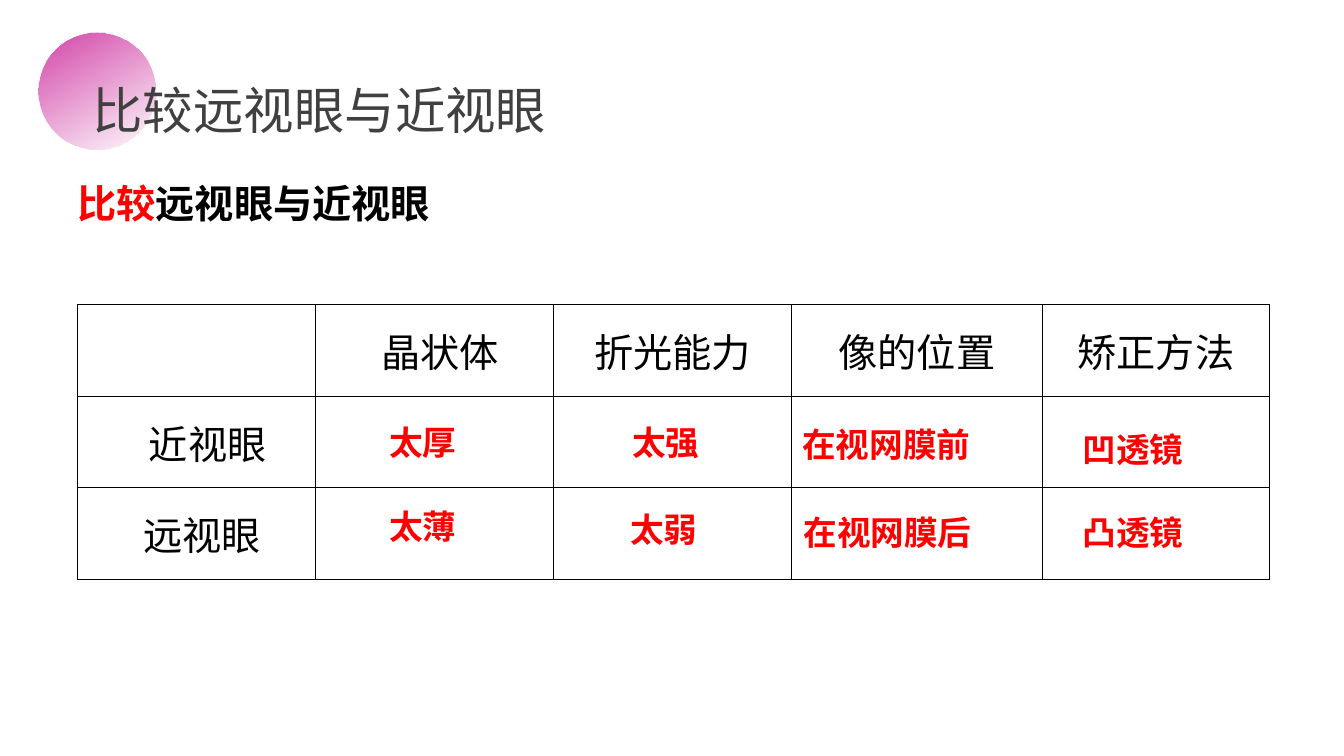
from pptx import Presentation
from pptx.dml.color import RGBColor
from pptx.enum.shapes import MSO_SHAPE as Preset
from pptx.enum.text import MSO_ANCHOR as Anchor, MSO_AUTO_SIZE as AutoSize, PP_ALIGN as Align
from pptx.oxml.ns import qn
from pptx.util import Pt
from lxml.etree import SubElement, Element

EMU_PER_PX = 9144  # 100 px to the inch
COLOURS = {"black": "000000", "red": "FF0000", "grey": "404040", "pink": "D343A9"}
FONT = "Arial"

COLUMN_WIDTHS = [236, 236, 236, 249, 225]
ROW_HEIGHT = 91
# Text and extra left indent of each filled cell, by row and column
TABLE_LABELS = {
    (0, 1): ("晶状体", 11),
    (0, 2): ("折光能力", 0),
    (0, 3): ("像的位置", 0),
    (0, 4): ("矫正方法", 0),
    (1, 0): ("近视眼", 22),
    (2, 0): ("远视眼", 11),
}
# Answer, left, top, width
ANSWERS = [
    ("太厚", 376, 414, 149),
    ("太弱", 615, 500, 172),
    ("在视网膜后", 787, 503, 262),
    ("在视网膜前", 786, 416, 253),
    ("太强", 617, 414, 129),
    ("太薄", 376, 497, 159),
    ("凹透镜", 1064, 421, 185),
    ("凸透镜", 1064, 503, 217),
]


def px(length):
    return length * EMU_PER_PX


def rgb(name):
    return RGBColor.from_string(COLOURS[name])


def set_format(target, values):
    for name, value in values.items():
        setattr(target, name, value)


def add_run(paragraph, wording, size, colour, bold=False):
    run = paragraph.add_run()
    run.text = wording
    set_format(run.font, {"name": FONT, "size": Pt(size), "bold": bold})
    run.font.color.rgb = rgb(colour)


def add_text(slide, box, runs, size, bold=False):
    """Add a text box whose runs are (wording, colour) pairs."""
    frame = slide.shapes.add_textbox(*map(px, box)).text_frame
    set_format(frame, {"word_wrap": True, "auto_size": AutoSize.SHAPE_TO_FIT_TEXT})
    for wording, colour in runs:
        add_run(frame.paragraphs[0], wording, size, colour, bold)


def add_fading_circle(slide, left, top, diameter):
    circle = slide.shapes.add_shape(Preset.OVAL, *map(px, (left, top, diameter, diameter)))
    circle.shadow.inherit = False
    circle.line.fill.background()
    circle.fill.gradient()
    circle.fill.gradient_angle = 300
    for stop in circle.fill.gradient_stops:
        stop.color.rgb = rgb("pink")
    last_colour = list(circle._element.spPr.iter(qn("a:srgbClr")))[-1]
    SubElement(last_colour, qn("a:alpha"), val="0")


def add_borders(cell):
    properties = cell._tc.get_or_add_tcPr()
    for position, side in enumerate(("lnL", "lnR", "lnT", "lnB")):
        border = Element(qn(f"a:{side}"), w=str(Pt(1)))
        fill = SubElement(border, qn("a:solidFill"))
        SubElement(fill, qn("a:srgbClr"), val=COLOURS["black"])
        properties.insert(position, border)


def add_comparison_table(slide, left, top):
    rows, columns = 3, len(COLUMN_WIDTHS)
    size = (sum(COLUMN_WIDTHS), rows * ROW_HEIGHT)
    table = slide.shapes.add_table(rows, columns, *map(px, (left, top, *size))).table
    set_format(table, {"first_row": False, "horz_banding": False})
    for column, width in zip(table.columns, COLUMN_WIDTHS):
        column.width = px(width)
    for row in table.rows:
        row.height = px(ROW_HEIGHT)
    for cell in table.iter_cells():
        cell.fill.background()
        add_borders(cell)
    for (row, column), (label, indent) in TABLE_LABELS.items():
        cell = table.cell(row, column)
        set_format(cell, {
            "vertical_anchor": Anchor.MIDDLE,
            "margin_left": px(13 + indent),
            "margin_right": px(13),
            "margin_top": px(5),
            "margin_bottom": px(5),
        })
        paragraph = cell.text_frame.paragraphs[0]
        paragraph.alignment = Align.CENTER
        add_run(paragraph, label, 28, "black")


def main():
    deck = Presentation()
    set_format(deck, {"slide_width": px(1333), "slide_height": px(750)})
    slide = deck.slides.add_slide(deck.slide_layouts[6])

    add_fading_circle(slide, 38, 32, 116)
    add_text(slide, (67, 173, 668, 57),
             [("比较", "red"), ("远视眼与近视眼", "black")], 28, bold=True)
    add_comparison_table(slide, 77, 302)
    for answer, left, top, width in ANSWERS:
        add_text(slide, (left, top, width, 50), [(answer, "red")], 24, bold=True)
    add_text(slide, (82, 74, 530, 71), [("比较远视眼与近视眼", "grey")], 36)

    deck.save("out.pptx")


if __name__ == "__main__":
    main()
